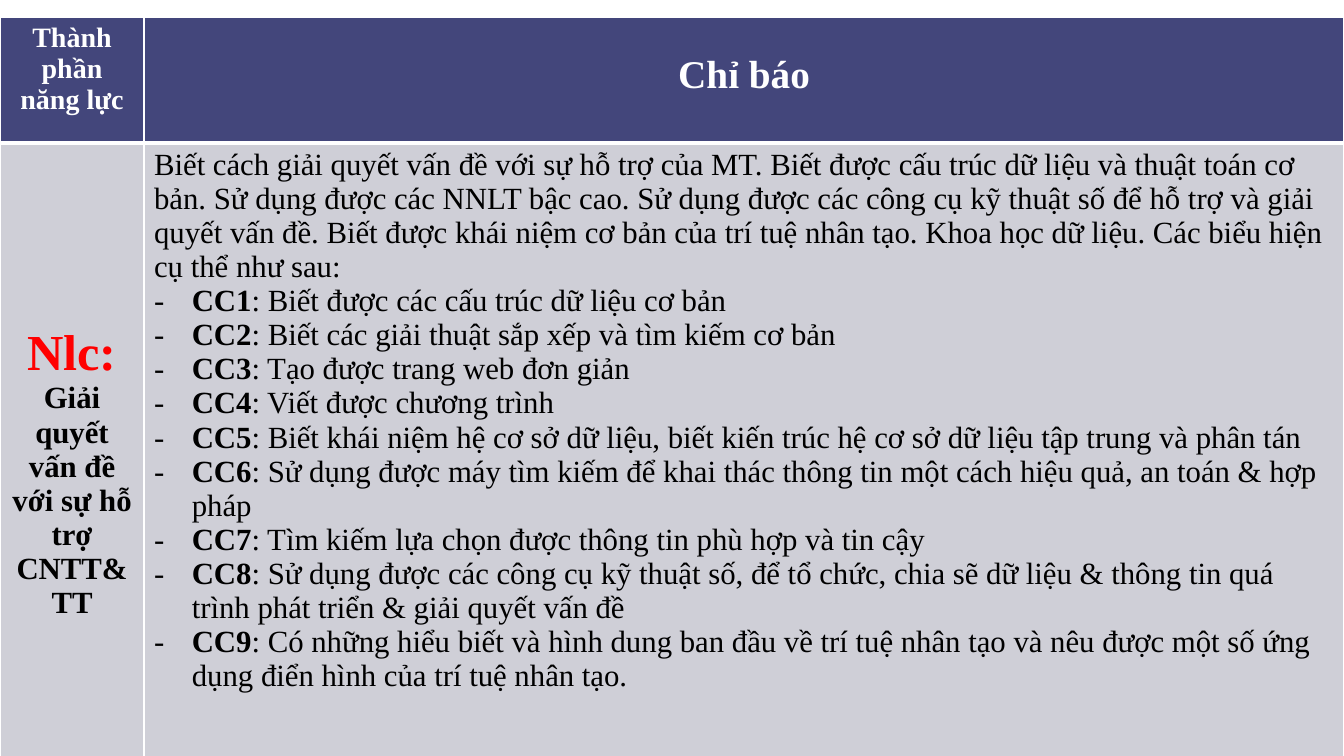
"""Build a slide with a table of competency indicators."""
from lxml import etree
from pptx import Presentation
from pptx.dml.color import RGBColor
from pptx.enum.text import MSO_ANCHOR, PP_ALIGN
from pptx.oxml.ns import qn
from pptx.util import Cm, Pt

CENTER, LEFT = PP_ALIGN.CENTER, PP_ALIGN.LEFT
MIDDLE = MSO_ANCHOR.MIDDLE
FONT = "Times New Roman"
WHITE, BLACK, RED = "FFFFFF", "000000", "FF0000"
NAVY, GREY = "43467B", "CFCFD7"
INDENT = Cm(0.95)

INTRO = (
    "Biết cách giải quyết vấn đề với sự hỗ trợ của MT. "
    "Biết được cấu trúc dữ liệu và thuật toán cơ bản. "
    "Sử dụng được các NNLT bậc cao. "
    "Sử dụng được các công cụ kỹ thuật số để hỗ trợ và giải quyết vấn đề. "
    "Biết được khái niệm cơ bản của trí tuệ nhân tạo. "
    "Khoa học dữ liệu. Các biểu hiện cụ thể như sau:"
)
ITEMS = [
    "Biết được các cấu trúc dữ liệu cơ bản",
    "Biết các giải thuật sắp xếp và tìm kiếm cơ bản",
    "Tạo được trang web đơn giản",
    "Viết được chương trình",
    "Biết khái niệm hệ cơ sở dữ liệu, biết kiến trúc hệ cơ sở dữ liệu tập trung và phân tán",
    "Sử dụng được máy tìm kiếm để khai thác thông tin một cách hiệu quả, an toán & hợp pháp",
    "Tìm kiếm lựa chọn được thông tin phù hợp và tin cậy",
    "Sử dụng được các công cụ kỹ thuật số, để tổ chức, chia sẽ dữ liệu & thông tin "
    "quá trình phát triển & giải quyết vấn đề",
    "Có những hiểu biết và hình dung ban đầu về trí tuệ nhân tạo "
    "và nêu được một số ứng dụng điển hình của trí tuệ nhân tạo.",
]


def paint(fmt, color):
    """Apply a solid hex colour to a fill."""
    fmt.solid()
    fmt.fore_color.rgb = RGBColor.from_string(color)


def write(para, text, size, color, bold, align):
    """Add one run to a paragraph."""
    para.alignment = align
    run = para.add_run()
    run.text = text
    run.font.name = FONT
    run.font.size = Pt(size)
    run.font.bold = bold
    paint(run.font.fill, color)


deck = Presentation()
deck.slide_width, deck.slide_height = Cm(33.87), Cm(19.05)
slide = deck.slides.add_slide(deck.slide_layouts[6])
frame = slide.shapes.add_table(2, 2, Cm(0), Cm(0.43), Cm(33.87), Cm(19.81))
table = frame.table
table.columns[0].width, table.columns[1].width = Cm(3.63), Cm(30.24)
table.rows[0].height, table.rows[1].height = Cm(3.17), Cm(16.64)

for row, fill in enumerate([NAVY, GREY]):
    widths = {"L": 1, "R": 1, "T": 1 + 2 * row, "B": 3 - 2 * row}
    for cell in table.rows[row].cells:
        paint(cell.fill, fill)
        props = cell._tc.get_or_add_tcPr()
        for spot, (side, width) in enumerate(widths.items()):
            line = etree.Element(qn("a:ln" + side), w=str(Pt(width)))
            solid = etree.SubElement(line, qn("a:solidFill"))
            etree.SubElement(solid, qn("a:srgbClr"), val=WHITE)
            props.insert(spot, line)

part, head = table.rows[0].cells
write(part.text_frame.paragraphs[0], "Thành phần năng lực", 20, WHITE, True, CENTER)
head.margin_top = Cm(0.91)
write(head.text_frame.paragraphs[0], "Chỉ báo", 28, WHITE, True, CENTER)

skill, detail = table.rows[1].cells
skill.vertical_anchor = MIDDLE
write(skill.text_frame.paragraphs[0], "Nlc:", 36, RED, True, CENTER)
write(skill.text_frame.add_paragraph(), "Giải quyết vấn đề với sự hỗ trợ CNTT&TT",
      22, BLACK, True, CENTER)

body = detail.text_frame
write(body.paragraphs[0], INTRO, 22, BLACK, False, LEFT)
for num, item in enumerate(ITEMS, 1):
    para = body.add_paragraph()
    write(para, f"CC{num}", 22, BLACK, True, LEFT)
    write(para, f": {item}", 22, BLACK, False, LEFT)
    props = para._p.get_or_add_pPr()
    props.set("marL", str(INDENT))
    props.set("indent", str(-INDENT))
    etree.SubElement(props, qn("a:buFont"), typeface=FONT)
    etree.SubElement(props, qn("a:buChar"), char="-")

deck.save("out.pptx")
